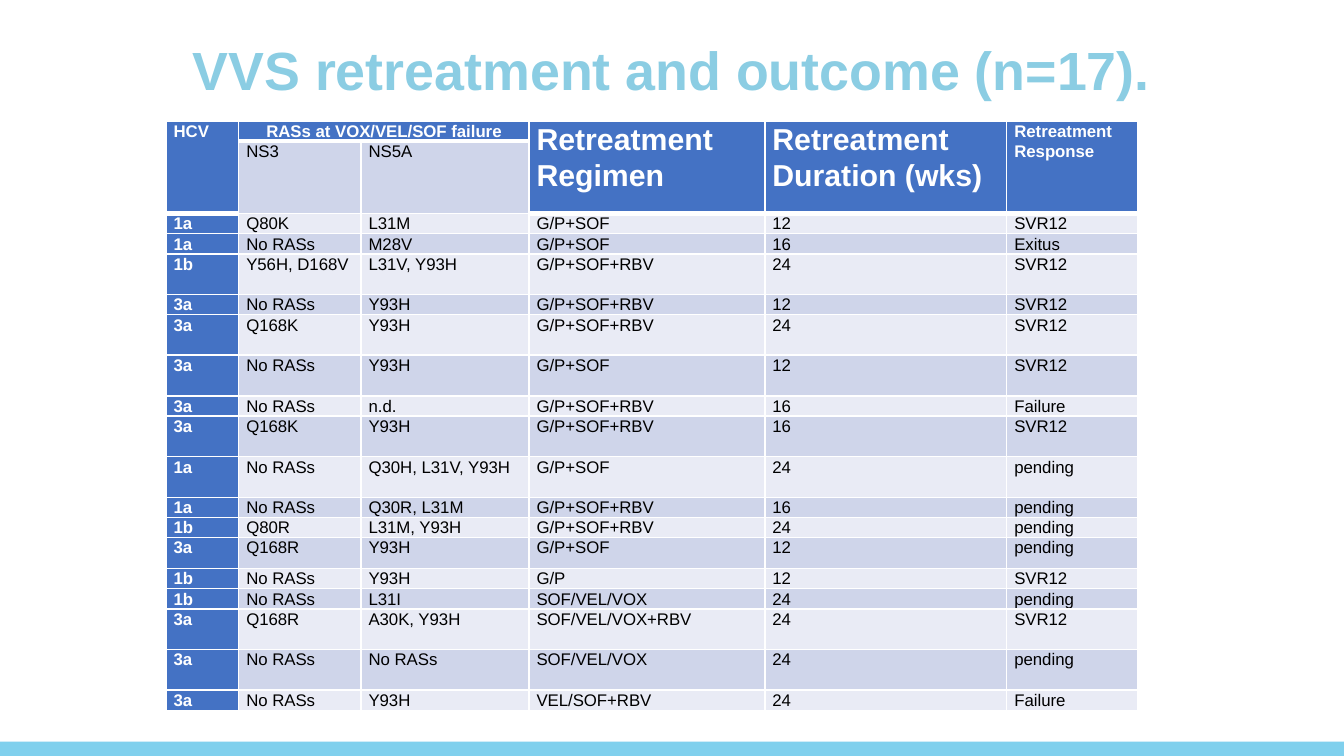
from lxml import etree
from pptx import Presentation
from pptx.dml.color import RGBColor
from pptx.enum.shapes import MSO_SHAPE
from pptx.enum.text import MSO_ANCHOR, PP_ALIGN
from pptx.oxml.ns import qn
from pptx.util import Pt

RECTANGLE = MSO_SHAPE.RECTANGLE
MIDDLE = MSO_ANCHOR.MIDDLE
CENTER = PP_ALIGN.CENTER
LEFT = PP_ALIGN.LEFT

BLUE, LIGHT, PALE = "4472C4", "CFD5EA", "E9EBF5"
WHITE, BLACK = "FFFFFF", "000000"
WIDTH, HEIGHT = 800, 450


def color(hex_code):
    return RGBColor.from_string(hex_code)


def format_cell(cell, fill, text_color, size=10, bold=False, align=LEFT, bottom=1):
    cell.margin_left = cell.margin_right = Pt(4.5)
    cell.margin_top = cell.margin_bottom = Pt(0)
    properties = cell._tc.get_or_add_tcPr()
    for side, width in (("L", 1), ("R", 1), ("T", 1), ("B", bottom)):
        line = etree.SubElement(properties, qn("a:ln" + side), w=str(Pt(width)))
        line_fill = etree.SubElement(line, qn("a:solidFill"))
        etree.SubElement(line_fill, qn("a:srgbClr"), val=WHITE)
    cell.fill.solid()
    cell.fill.fore_color.rgb = color(fill)
    for paragraph in cell.text_frame.paragraphs:
        paragraph.alignment = align
        paragraph.line_spacing = 1.07
        paragraph.space_after = Pt(8)
        for run in paragraph.runs:
            run.font.name = "Arial"
            run.font.size = Pt(size)
            run.font.bold = bold
            run.font.color.rgb = color(text_color)


prs = Presentation()
prs.slide_width, prs.slide_height = Pt(WIDTH), Pt(HEIGHT)
slide = prs.slides.add_slide(prs.slide_layouts[5])

# Bottom band
band = slide.shapes.add_shape(RECTANGLE, Pt(0), Pt(441.4), Pt(WIDTH), Pt(8.6))
band.shadow.inherit = False
band.fill.solid()
band.fill.fore_color.rgb = color("54C0E8")
band.line.fill.background()
band_color = band.fill._xPr.find(qn("a:solidFill"))[0]
etree.SubElement(band_color, qn("a:alpha"), val="74000")

# Title
title = slide.shapes.title
title.left, title.top, title.width, title.height = Pt(54.7), Pt(18), Pt(690.5), Pt(50.4)
title.text_frame.text = "VVS retreatment and outcome (n=17)."
title.text_frame.word_wrap = True
title.text_frame.vertical_anchor = MIDDLE
heading = title.text_frame.paragraphs[0]
heading.alignment = CENTER
heading.line_spacing = 0.9
heading_font = heading.runs[0].font
heading_font.name = "Arial"
heading_font.size = Pt(32)
heading_font.bold = True
heading_font.color.rgb = color("8BCDE3")

# Retreated patients: row height, then one value per column
SHORT, MEDIUM, TALL = 12, 18.5, 24.2
patients = [
    (SHORT, "1a", "Q80K", "L31M", "G/P+SOF", "12", "SVR12"),
    (SHORT, "1a", "No RASs", "M28V", "G/P+SOF", "16", "Exitus"),
    (TALL, "1b", "Y56H, D168V", "L31V, Y93H", "G/P+SOF+RBV", "24", "SVR12"),
    (SHORT, "3a", "No RASs", "Y93H", "G/P+SOF+RBV", "12", "SVR12"),
    (TALL, "3a", "Q168K", "Y93H", "G/P+SOF+RBV", "24", "SVR12"),
    (TALL, "3a", "No RASs", "Y93H", "G/P+SOF", "12", "SVR12"),
    (SHORT, "3a", "No RASs", "n.d.", "G/P+SOF+RBV", "16", "Failure"),
    (TALL, "3a", "Q168K", "Y93H", "G/P+SOF+RBV", "16", "SVR12"),
    (TALL, "1a", "No RASs", "Q30H, L31V, Y93H", "G/P+SOF", "24", "pending"),
    (SHORT, "1a", "No RASs", "Q30R, L31M", "G/P+SOF+RBV", "16", "pending"),
    (SHORT, "1b", "Q80R", "L31M, Y93H", "G/P+SOF+RBV", "24", "pending"),
    (MEDIUM, "3a", "Q168R", "Y93H", "G/P+SOF", "12", "pending"),
    (SHORT, "1b", "No RASs", "Y93H", "G/P", "12", "SVR12"),
    (SHORT, "1b", "No RASs", "L31I", "SOF/VEL/VOX", "24", "pending"),
    (TALL, "3a", "Q168R", "A30K, Y93H", "SOF/VEL/VOX+RBV", "24", "SVR12"),
    (TALL, "3a", "No RASs", "No RASs", "SOF/VEL/VOX", "24", "pending"),
    (SHORT, "3a", "No RASs", "Y93H", "VEL/SOF+RBV", "24", "Failure"),
]
column_widths = [43.2, 72.8, 100, 140.4, 144, 77.8]
row_heights = [12, 42] + [patient[0] for patient in patients]

outcomes = slide.shapes.add_table(
    len(row_heights), len(column_widths), Pt(98.9), Pt(72),
    Pt(sum(column_widths)), Pt(sum(row_heights))).table
outcomes.first_row = outcomes.horz_banding = False
for column, width in zip(outcomes.columns, column_widths):
    column.width = Pt(width)
for row, height in zip(outcomes.rows, row_heights):
    row.height = Pt(height)

# Header: text, first column, last column, last row, size, alignment
headers = [
    ("HCV", 0, 0, 1, 10, LEFT),
    ("RASs at VOX/VEL/SOF failure", 1, 2, 0, 10, CENTER),
    ("Retreatment Regimen", 3, 3, 1, 18, LEFT),
    ("Retreatment Duration (wks)", 4, 4, 1, 18, LEFT),
    ("Retreatment Response", 5, 5, 1, 10, LEFT),
]
for text, first, last, last_row, size, align in headers:
    header = outcomes.cell(0, first)
    header.merge(outcomes.cell(last_row, last))
    header.text_frame.text = text
    for r in range(last_row + 1):
        for c in range(first, last + 1):
            format_cell(outcomes.cell(r, c), BLUE, WHITE, size, True, align, bottom=3)

for c, region in enumerate(["NS3", "NS5A"], start=1):
    subheader = outcomes.cell(1, c)
    subheader.text_frame.text = region
    format_cell(subheader, LIGHT, BLACK)

# Body: genotype column in blue, the rest in alternating bands
for r, (_, *values) in enumerate(patients, start=2):
    band_fill = LIGHT if r % 2 else PALE
    for c, value in enumerate(values):
        cell = outcomes.cell(r, c)
        cell.text_frame.text = value
        if c == 0:
            format_cell(cell, BLUE, WHITE, bold=True)
        else:
            format_cell(cell, band_fill, BLACK)

prs.save("out.pptx")
